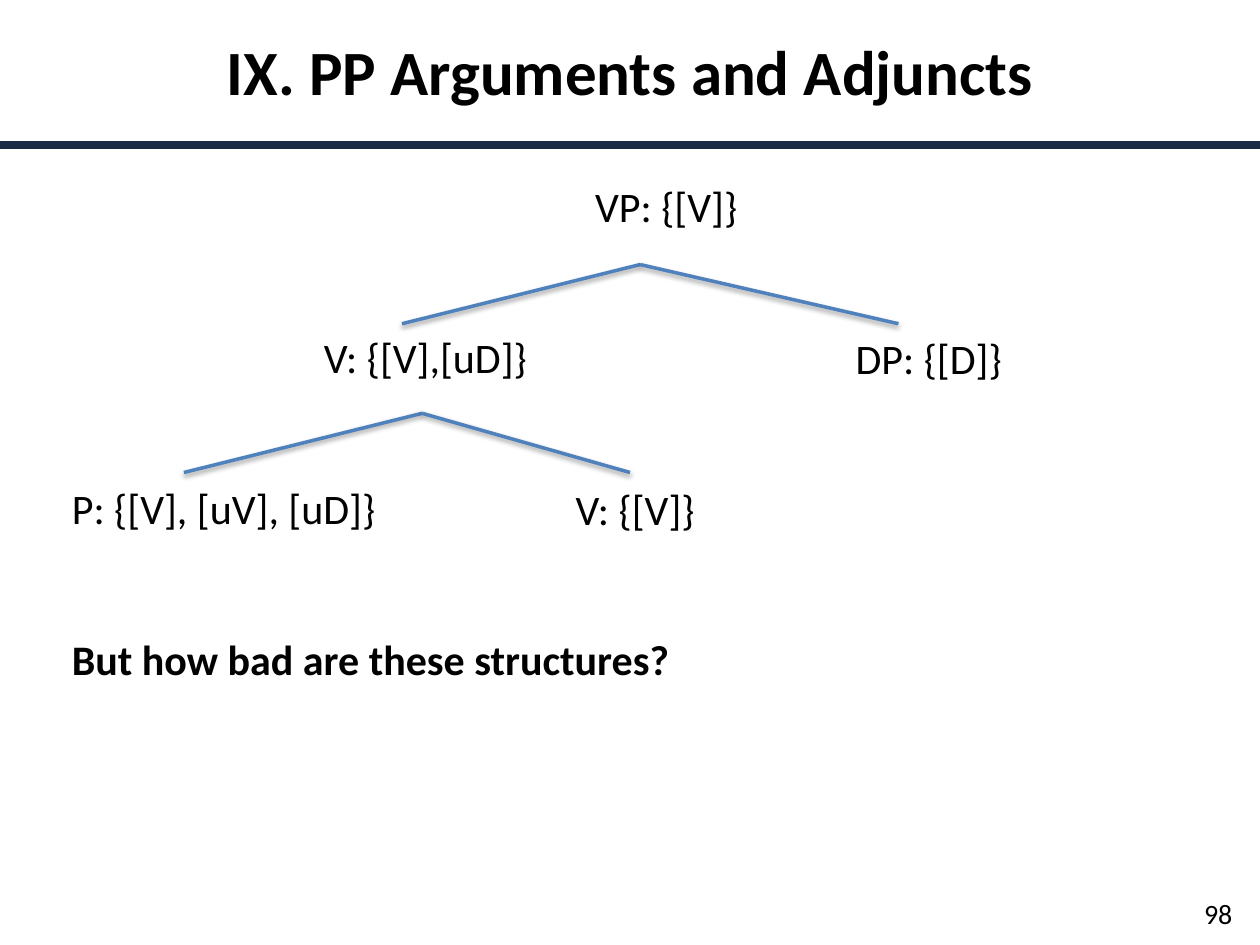
from lxml import etree
from pptx import Presentation
from pptx.dml.color import RGBColor
from pptx.enum import shapes, text
from pptx.oxml import ns
from pptx.util import Pt

COLORS = {"text": "000000", "rule": "192C43", "branch": "4F81BD", "shadow": "000000"}
FONT = "Calibri"
BODY_LEFT, BODY_TOP = 33.84, 99.8
ROW_GAP = 57.5
ROW_PITCH = 86.4

# Indent and label of each row's left node, and of the node's right sister.
LEFT_NODES = [(299, "VP: {[V]}"), (144, "V: {[V],[uD]}"), (0, "P: {[V], [uV], [uD]}")]
RIGHT_NODES = [(1, 448, "DP: {[D]}"), (2, 288, "V: {[V]}")]
QUESTION = "But how bad are these structures?"

# Parent point, followed by the points of its two children.
BRANCHES = [
    ((365.8, 151.2), [(229.7, 185), (513.4, 185)]),
    ((241.2, 236.2), [(105.1, 270), (360, 270)]),
]


def place(shape, left, top, width, height):
    shape.left, shape.top = Pt(left), Pt(top)
    shape.width, shape.height = Pt(width), Pt(height)


def write(paragraph, content, size=24, bold=False, align=text.PP_ALIGN.LEFT, before=0):
    paragraph.alignment = align
    paragraph.space_before = Pt(before)
    run = paragraph.add_run()
    run.text = content
    run.font.name, run.font.size, run.font.bold = FONT, Pt(size), bold
    run.font.color.rgb = RGBColor.from_string(COLORS["text"])


def set_indent(paragraph, indent):
    """Remove the bullet and start every line at the indent."""
    properties = paragraph._p.get_or_add_pPr()
    properties.set("marL", str(Pt(indent)))
    properties.set("indent", "0")
    etree.SubElement(properties, ns.qn("a:buNone"))


def add_line(slide, start, end, color, width, shadow=False):
    line = slide.shapes.add_connector(
        shapes.MSO_CONNECTOR.STRAIGHT, *(Pt(value) for value in (*start, *end))
    )
    line.line.color.rgb = RGBColor.from_string(COLORS[color])
    line.line.width = Pt(width)
    effects = etree.SubElement(line._element.spPr, ns.qn("a:effectLst"))
    if shadow:
        outer = etree.SubElement(
            effects, ns.qn("a:outerShdw"), blurRad=str(Pt(3.1)), dist=str(Pt(1.6)),
            dir="5400000", rotWithShape="0",
        )
        tint = etree.SubElement(outer, ns.qn("a:srgbClr"), val=COLORS["shadow"])
        etree.SubElement(tint, ns.qn("a:alpha"), val="38000")


def add_title(slide, content):
    title = slide.shapes.title
    place(title, 6, 14.6, 708, 51)
    title.text_frame.auto_size = text.MSO_AUTO_SIZE.NONE
    write(title.text_frame.paragraphs[0], content, size=36, bold=True,
          align=text.PP_ALIGN.CENTER)


def add_text_box(slide, content, left, top, width, height, **text_format):
    box = slide.shapes.add_textbox(Pt(left), Pt(top), Pt(width), Pt(height))
    box.text_frame.word_wrap = True
    write(box.text_frame.paragraphs[0], content, **text_format)
    return box


def add_body(slide):
    """Left nodes of the tree and the closing question, one paragraph each."""
    body = slide.placeholders[1]
    place(body, BODY_LEFT, BODY_TOP, 660, 327)
    frame = body.text_frame
    frame.auto_size = text.MSO_AUTO_SIZE.NONE
    for index, (indent, label) in enumerate([*LEFT_NODES, (0, QUESTION)]):
        paragraph = frame.add_paragraph() if index else frame.paragraphs[0]
        write(paragraph, label, bold=label == QUESTION, before=ROW_GAP if index else 0)
        set_indent(paragraph, indent)


def main():
    presentation = Presentation()
    presentation.slide_width, presentation.slide_height = Pt(720), Pt(540)
    slide = presentation.slides.add_slide(presentation.slide_layouts[1])
    add_line(slide, (0, 82.8), (720, 82.8), "rule", 4.5)
    number = add_text_box(slide, "98", 665.3, 507.6, 46, 28.8, size=16,
                          align=text.PP_ALIGN.RIGHT)
    number.text_frame.vertical_anchor = text.MSO_ANCHOR.MIDDLE
    add_title(slide, "IX. PP Arguments and Adjuncts")
    add_body(slide)
    for row, indent, label in RIGHT_NODES:
        add_text_box(slide, label, BODY_LEFT + indent, BODY_TOP + row * ROW_PITCH, 120, 36.5)
    for parent, children in BRANCHES:
        for child in children:
            add_line(slide, parent, child, "branch", 2, shadow=True)
    presentation.save("out.pptx")


if __name__ == "__main__":
    main()
